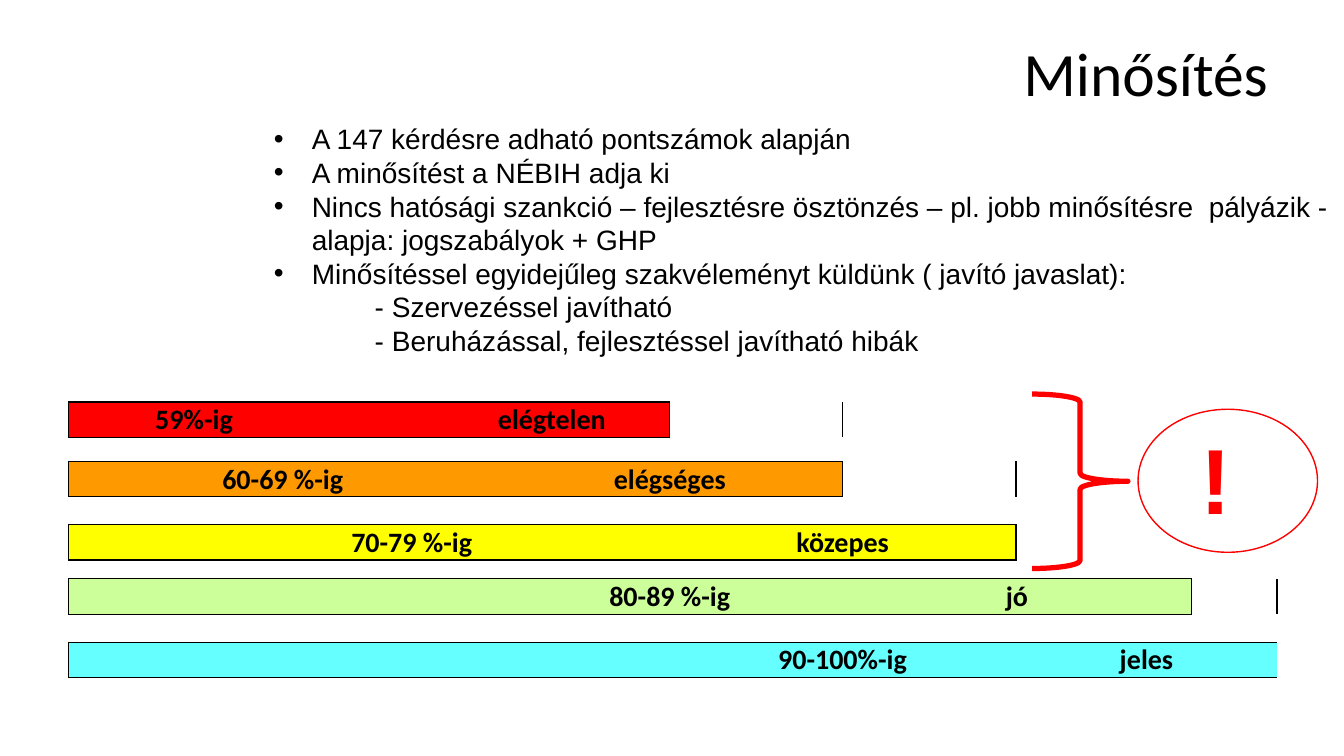
from dataclasses import dataclass

from lxml import etree
from pptx import Presentation
from pptx.dml.color import RGBColor
from pptx.enum import shapes, text
from pptx.oxml import ns
from pptx.util import Pt


@dataclass(frozen=True)
class Theme:
    heading_font: str = "Calibri"
    body_font: str = "Arial"
    black: str = "000000"
    red: str = "FF0000"
    orange: str = "FF9900"
    yellow: str = "FFFF00"
    green: str = "CCFF99"
    cyan: str = "66FFFF"
    title_size: float = 44
    body_size: float = 20
    mark_size: float = 66


THEME = Theme()
NO_STYLE = "{2D5ABB26-0587-4C30-8999-92F81FD0307C}"
COLUMN_WIDTHS = (61.2, 244.8, 123.1, 123.8, 123.8, 125.3, 61.2)
BAR_HEIGHT = 25
GAP_HEIGHTS = (17.2, 20, 13.5, 20)

# score, grade, colour, first column of score, first column of grade, columns spanned
BARS = (
    ("59%-ig", "elégtelen", THEME.red, 1, 2, 1),
    ("60-69 %-ig", "elégséges", THEME.orange, 0, 2, 2),
    ("70-79 %-ig", "közepes", THEME.yellow, 1, 3, 2),
    ("80-89 %-ig", "jó", THEME.green, 2, 4, 2),
    ("90-100%-ig", "jeles", THEME.cyan, 3, 5, 2),
)
BULLETS = (
    "A 147 kérdésre adható pontszámok alapján",
    "A minősítést a NÉBIH adja ki",
    "Nincs hatósági szankció – fejlesztésre ösztönzés – pl. jobb minősítésre  pályázik - "
    "alapja: jogszabályok + GHP",
    "Minősítéssel egyidejűleg szakvéleményt küldünk ( javító javaslat):",
)
SUB_ITEMS = ("- Szervezéssel javítható", "- Beruházással, fejlesztéssel javítható hibák")


def points(*values):
    return [Pt(value) for value in values]


def add_element(parent, tag, **attributes):
    return etree.SubElement(parent, ns.qn(tag), attributes)


def write(paragraph, content, size=THEME.body_size, font=THEME.body_font,
          color=THEME.black, bold=False, align=text.PP_ALIGN.LEFT):
    paragraph.alignment = align
    run = paragraph.add_run()
    run.text = content
    run.font.size = Pt(size)
    run.font.name = font
    run.font.bold = bold
    run.font.color.rgb = RGBColor.from_string(color)


def set_indent(paragraph, left, first=0, bullet=None):
    properties = paragraph._p.get_or_add_pPr()
    properties.set("marL", str(Pt(left)))
    properties.set("indent", str(Pt(first)))
    if bullet:
        add_element(properties, "a:buFont", typeface=THEME.body_font)
        add_element(properties, "a:buChar", char=bullet)


def add_title(slide, content):
    title = slide.shapes.title
    title.left, title.top, title.width, title.height = points(193.7, 9.4, 719.3, 90)
    title.text_frame.vertical_anchor = text.MSO_ANCHOR.MIDDLE
    paragraph = title.text_frame.paragraphs[0]
    paragraph.line_spacing = 0.9
    write(paragraph, content, THEME.title_size, THEME.heading_font,
          align=text.PP_ALIGN.RIGHT)


def in_bar(row, column):
    """Tell whether a table cell belongs to a coloured bar; bars take every second row."""
    if row % 2 or not 0 <= row < 2 * len(BARS) or column < 0:
        return False
    grade_start, span = BARS[row // 2][4:]
    return column < grade_start + span


def format_cell(cell, row, column):
    """Draw a line wherever bar meets background, and fill the cell."""
    inside = in_bar(row, column)
    neighbours = {"L": (row, column - 1), "R": (row, column + 1),
                  "T": (row - 1, column), "B": (row + 1, column)}
    cell.margin_left = cell.margin_right = cell.margin_top = Pt(0.7)
    cell.margin_bottom = 0
    cell.vertical_anchor = text.MSO_ANCHOR.BOTTOM
    properties = cell._tc.get_or_add_tcPr()
    for side, neighbour in neighbours.items():
        if in_bar(*neighbour) != inside:
            line = add_element(properties, f"a:ln{side}", w=str(Pt(1)))
            fill = add_element(line, "a:solidFill")
            add_element(fill, "a:srgbClr", val=THEME.black)
    if inside:
        cell.fill.solid()
        cell.fill.fore_color.rgb = RGBColor.from_string(BARS[row // 2][2])
    else:
        cell.fill.background()


def add_grade_table(slide):
    heights = [BAR_HEIGHT]
    for gap in GAP_HEIGHTS:
        heights += [gap, BAR_HEIGHT]
    frame = slide.shapes.add_table(len(heights), len(COLUMN_WIDTHS), *points(
        49, 287.2, sum(COLUMN_WIDTHS), sum(heights)))
    table = frame.table
    table.first_row = table.horz_banding = False
    table._tbl.tblPr.find(ns.qn("a:tableStyleId")).text = NO_STYLE
    for column, width in zip(table.columns, COLUMN_WIDTHS):
        column.width = Pt(width)
    for row, height in zip(table.rows, heights):
        row.height = Pt(height)

    labels = {}
    for index, (score, grade, _, score_start, grade_start, span) in enumerate(BARS):
        labels[2 * index, score_start] = score, span
        labels[2 * index, grade_start] = grade, span
    for row in range(len(heights)):
        for column in range(len(COLUMN_WIDTHS)):
            cell = table.cell(row, column)
            format_cell(cell, row, column)
            paragraph = cell.text_frame.paragraphs[0]
            if (row, column) not in labels:
                # small type keeps an empty row at its set height
                add_element(paragraph._p, "a:endParaRPr", sz="600")
                continue
            label, span = labels[row, column]
            align = text.PP_ALIGN.CENTER if span > 1 else text.PP_ALIGN.LEFT
            write(paragraph, label, font=THEME.heading_font, bold=True, align=align)
    for (row, column), (_, span) in labels.items():
        if span > 1:
            table.cell(row, column).merge(table.cell(row, column + span - 1))


def add_text_box(slide, *box):
    frame = slide.shapes.add_textbox(*points(*box)).text_frame
    frame.word_wrap = True
    return frame


def add_bullets(slide):
    frame = add_text_box(slide, 188.6, 83.5, 771.8, 177)
    for index, content in enumerate(BULLETS + SUB_ITEMS):
        paragraph = frame.add_paragraph() if index else frame.paragraphs[0]
        if content in BULLETS:
            set_indent(paragraph, 27, -27, "•")
        else:
            set_indent(paragraph, 72)
        write(paragraph, content)


def add_outline(slide, kind, line_width, *box):
    shape = slide.shapes.add_shape(kind, *points(*box))
    shape.shadow.inherit = False
    shape.fill.background()
    shape.line.color.rgb = RGBColor.from_string(THEME.red)
    shape.line.width = Pt(line_width)


def main():
    presentation = Presentation()
    presentation.slide_width, presentation.slide_height = points(960, 540)
    slide = presentation.slides.add_slide(presentation.slide_layouts[5])
    add_title(slide, "Minősítés")
    add_grade_table(slide)
    add_bullets(slide)
    add_outline(slide, shapes.MSO_SHAPE.RIGHT_BRACE, 3.75, 737.3, 281.5, 68.4, 124.6)
    add_outline(slide, shapes.MSO_SHAPE.OVAL, 1, 812.9, 292.3, 128.2, 102.2)
    mark = add_text_box(slide, 850.3, 298.1, 45.4, 87.1)
    write(mark.paragraphs[0], "!", THEME.mark_size, color=THEME.red, bold=True)
    presentation.save("out.pptx")


if __name__ == "__main__":
    main()
